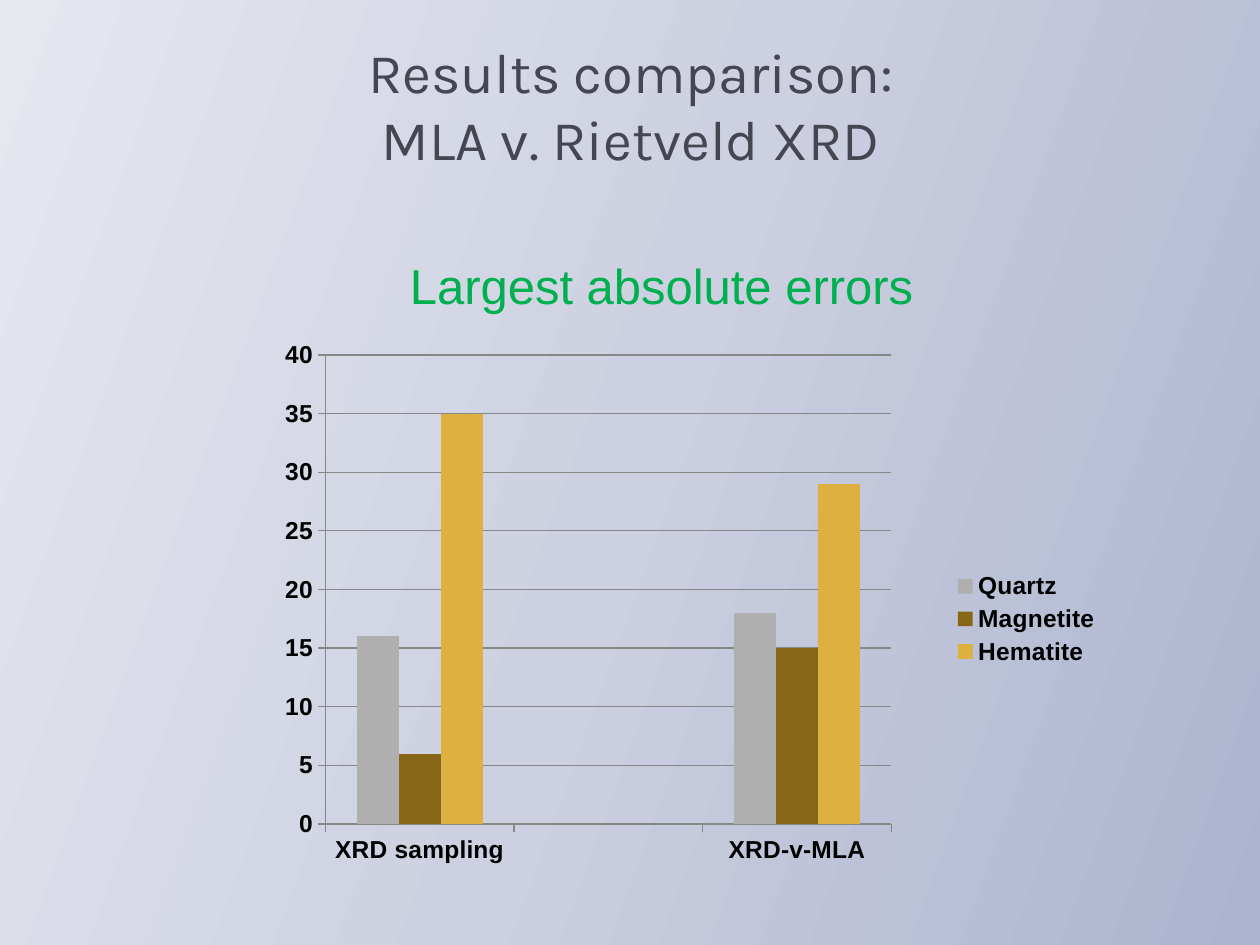
from copy import deepcopy
from dataclasses import dataclass
from typing import Any

from lxml.etree import SubElement
from pptx import Presentation
from pptx.chart.data import CategoryChartData
from pptx.dml.color import RGBColor
from pptx.enum.chart import XL_CHART_TYPE, XL_LEGEND_POSITION, XL_TICK_MARK
from pptx.enum.text import MSO_ANCHOR, PP_ALIGN
from pptx.oxml.ns import qn
from pptx.util import Emu, Pt

PX_PER_INCH = 126
COLORS = {
    "title": "464653",
    "subtitle": "00B050",
    "label": "000000",
    "axis": "878787",
    "Quartz": "AFAFAF",
    "Magnetite": "876717",
    "Hematite": "DEB03F",
}
BACKGROUND_STOPS = [(0, "ADB3CF"), (0.5, "CCD0E0"), (1, "E6E7EF")]
CATEGORIES = ["XRD sampling", "", "XRD-v-MLA"]
PLOT_LAYOUT = {
    "layoutTarget": "inner",
    "xMode": "edge",
    "yMode": "edge",
    "x": 0.107,
    "y": 0.051,
    "w": 0.642,
    "h": 0.798,
}


@dataclass
class Area:
    left: int
    top: int
    width: int
    height: int

    def emu(self) -> list[Emu]:
        return [px(n) for n in (self.left, self.top, self.width, self.height)]


@dataclass
class Heading:
    text: str
    area: Area
    color: str
    font: dict[str, Any]
    anchor: MSO_ANCHOR


@dataclass
class Mineral:
    name: str
    errors: tuple


HEADINGS = [
    Heading("Results comparison:\vMLA v. Rietveld XRD", Area(64, 42, 1134, 126),
            "title", {"name": "Karla", "size": Pt(32)}, MSO_ANCHOR.MIDDLE),
    Heading("Largest absolute errors", Area(357, 249, 609, 71),
            "subtitle", {"name": "Arial", "size": Pt(28)}, MSO_ANCHOR.TOP),
]
MINERALS = [
    Mineral("Quartz", (16, None, 18)),
    Mineral("Magnetite", (6, None, 15)),
    Mineral("Hematite", (35, None, 29)),
]
CHART_AREA = Area(231, 325, 882, 588)
LABEL_FONT = {"name": "Arial", "size": Pt(14), "bold": True}


def px(length: int) -> Emu:
    return Emu(round(length * 914400 / PX_PER_INCH))


def rgb(name: str) -> RGBColor:
    return RGBColor.from_string(COLORS[name])


def apply(target: Any, values: dict[str, Any]) -> None:
    for name, value in values.items():
        setattr(target, name, value)


def style_font(font: Any, values: dict[str, Any], color: str) -> None:
    apply(font, values)
    font.color.rgb = rgb(color)


def paint_background(page: Any) -> None:
    fill = page.background.fill
    fill.gradient()
    fill.gradient_angle = 160
    stop_list = page.background._cSld.find(".//" + qn("a:gsLst"))
    stop_list.insert(1, deepcopy(stop_list[0]))
    for stop, (position, color) in zip(fill.gradient_stops, BACKGROUND_STOPS):
        stop.position = position
        stop.color.rgb = RGBColor.from_string(color)


def add_heading(page: Any, heading: Heading) -> None:
    box = page.shapes.add_textbox(*heading.area.emu())
    apply(box.text_frame, {"word_wrap": True, "vertical_anchor": heading.anchor})
    para = box.text_frame.paragraphs[0]
    para.text = heading.text
    para.alignment = PP_ALIGN.CENTER
    for span in para.runs:
        style_font(span.font, heading.font, heading.color)


def style_line(line: Any) -> None:
    line.color.rgb = rgb("axis")
    line.width = Pt(0.75)


def place_plot(chart: Any) -> None:
    plot_area = chart._chartSpace.find(".//" + qn("c:plotArea"))
    layout = plot_area.find(qn("c:layout"))
    if layout is None:
        layout = SubElement(plot_area, qn("c:layout"))
        plot_area.insert(0, layout)
    manual = SubElement(layout, qn("c:manualLayout"))
    for name, value in PLOT_LAYOUT.items():
        SubElement(manual, qn(f"c:{name}")).set("val", str(value))


def add_error_chart(page: Any) -> None:
    data = CategoryChartData(number_format="0")
    data.categories = CATEGORIES
    for mineral in MINERALS:
        data.add_series(mineral.name, mineral.errors)
    chart = page.shapes.add_chart(
        XL_CHART_TYPE.COLUMN_CLUSTERED, *CHART_AREA.emu(), data
    ).chart
    apply(chart, {"has_title": False, "has_legend": True})
    style_font(chart.font, {"name": "Arial", "size": Pt(10)}, "label")
    apply(chart.legend, {"position": XL_LEGEND_POSITION.RIGHT,
                         "include_in_layout": False})
    style_font(chart.legend.font, LABEL_FONT, "label")
    for axis in (chart.category_axis, chart.value_axis):
        axis.major_tick_mark = XL_TICK_MARK.OUTSIDE
        style_font(axis.tick_labels.font, LABEL_FONT, "label")
        style_line(axis.format.line)
    apply(chart.value_axis, {"minimum_scale": 0, "maximum_scale": 40,
                             "major_unit": 5, "has_major_gridlines": True})
    style_line(chart.value_axis.major_gridlines.format.line)
    apply(chart.value_axis.tick_labels, {"number_format": "0",
                                         "number_format_is_linked": False})
    plot = chart.plots[0]
    apply(plot, {"gap_width": 150, "overlap": 0, "vary_by_categories": False})
    for series in plot.series:
        series.format.fill.solid()
        series.format.fill.fore_color.rgb = rgb(series.name)
    place_plot(chart)


def main() -> None:
    deck = Presentation()
    apply(deck, {"slide_width": px(1260), "slide_height": px(945)})
    page = deck.slides.add_slide(deck.slide_layouts[6])
    paint_background(page)
    for heading in HEADINGS:
        add_heading(page, heading)
    add_error_chart(page)
    deck.save("out.pptx")


if __name__ == "__main__":
    main()
